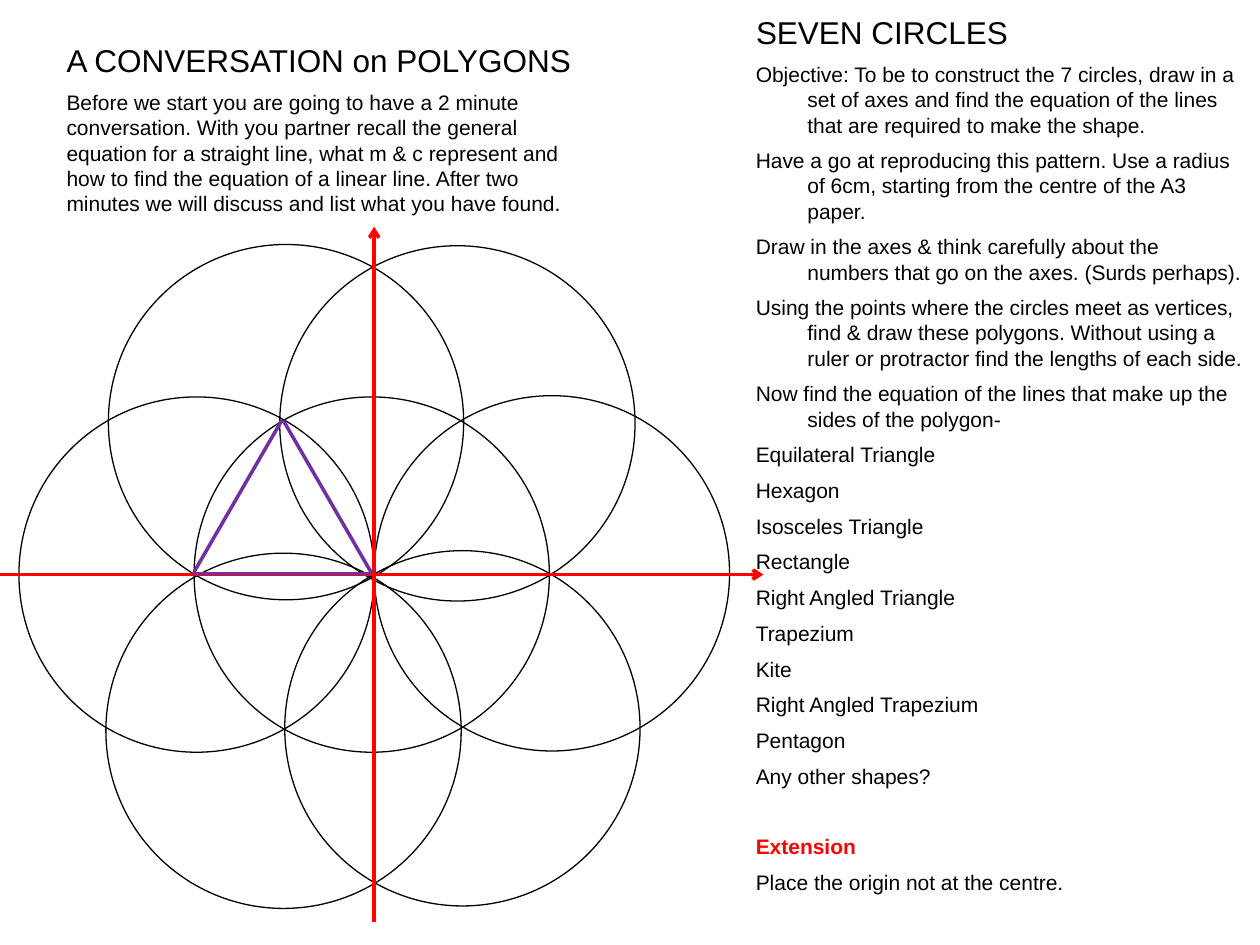
from lxml.etree import SubElement
from pptx import Presentation
from pptx.dml.color import RGBColor
from pptx.enum.shapes import MSO_CONNECTOR as CONN, MSO_SHAPE as SHAPE
from pptx.enum.text import MSO_ANCHOR, MSO_AUTO_SIZE, PP_ALIGN
from pptx.oxml.ns import qn
from pptx.util import Inches, Pt

BLACK = RGBColor(0x00, 0x00, 0x00)
RED = RGBColor(0xFF, 0x00, 0x00)
PURPLE = RGBColor(0x70, 0x30, 0xA0)
FONT = "Arial"
HEADING, BODY = 18, 12

# Content
TITLE = "SEVEN CIRCLES"
CONVERSATION = [
    "A CONVERSATION on POLYGONS",
    "Before we start you are going to have a 2 minute conversation. With you partner "
    "recall the general equation for a straight line, what m & c represent and how to "
    "find the equation of a linear line. After two minutes we will discuss and list "
    "what you have found.",
]
TASKS = [
    "Objective: To be to construct the 7 circles, draw in a set of axes and find the "
    "equation of the lines that are required to make the shape.",
    "Have a go at reproducing this pattern. Use a radius of 6cm, starting from the "
    "centre of the A3 paper.",
    "Draw in the axes & think carefully about the numbers that go on the axes. "
    "(Surds perhaps).",
    "Using the points where the circles meet as vertices, find & draw these polygons. "
    "Without using a ruler or protractor find the lengths of each side.",
    "Now find the equation of the lines that make up the sides of the polygon-",
    "Equilateral Triangle", "Hexagon", "Isosceles Triangle", "Rectangle",
    "Right Angled Triangle", "Trapezium", "Kite", "Right Angled Trapezium",
    "Pentagon", "Any other shapes?",
]
EXTENSION = ["Extension", "Place the origin not at the centre."]

# Geometry in inches: hand-placed circle centres, centre circle first
RADIUS = 1.41
CENTRES = [(2.95, 4.56), (4.38, 4.55), (3.63, 3.36), (2.27, 3.35),
           (1.56, 4.56), (2.25, 5.8), (3.67, 5.78)]
AXES = [((2.97, 7.32), (2.97, 1.8)), ((0, 4.56), (6.06, 4.56))]
TRIANGLE = [((1.54, 4.54), (2.24, 3.33)), ((1.54, 4.55), (2.93, 4.55)),
            ((2.95, 4.55), (2.25, 3.34))]


def place(sp, *box):
    sp.left, sp.top, sp.width, sp.height = map(Inches, box)


def style(p, size=BODY, color=BLACK, bold=False):
    p.alignment = PP_ALIGN.LEFT
    f = p.runs[0].font
    f.name, f.size, f.bold = FONT, Pt(size), bold
    f.color.rgb = color


def add_text(slide, box, lines, hanging=0):
    tf = slide.shapes.add_textbox(*map(Inches, box)).text_frame
    tf.word_wrap = True
    tf.text = "\n".join(lines)
    for i, p in enumerate(tf.paragraphs):
        style(p)
        p.space_before = Pt(6 if i else 0)
        if hanging:
            pPr = p._p.get_or_add_pPr()
            pPr.set("marL", str(Inches(hanging)))
            pPr.set("indent", str(-Inches(hanging)))
    return tf.paragraphs


def add_line(slide, start, end, color, arrow=False):
    c = slide.shapes.add_connector(CONN.STRAIGHT, *map(Inches, start + end))
    c.line.color.rgb, c.line.width = color, Pt(2)
    if arrow:
        SubElement(c.line._get_or_add_ln(), qn("a:tailEnd"), type="arrow")
    SubElement(c._element.spPr, qn("a:effectLst"))


prs = Presentation()
prs.slide_width, prs.slide_height = Inches(10), Inches(7.5)
slide = prs.slides.add_slide(prs.slide_layouts[5])

# Title
title = slide.shapes.title
place(title, 5.9, 0.05, 4.07, 0.39)
tf = title.text_frame
tf.text = TITLE
tf.vertical_anchor = MSO_ANCHOR.TOP
tf.auto_size = MSO_AUTO_SIZE.NONE
style(tf.paragraphs[0], HEADING)

# Task list, with a wider gap before the extension
tasks = add_text(slide, (5.9, 0.44, 4.07, 7.05), TASKS + EXTENSION, hanging=0.41)
extension = tasks[len(TASKS)]
style(extension, color=RED, bold=True)
extension.space_before = Pt(26)

# Conversation starter
heading = add_text(slide, (0.43, 0.28, 4.4, 1.51), CONVERSATION)[0]
style(heading, HEADING)

# Seven circles
circles = slide.shapes.add_group_shape()
for x, y in CENTRES:
    sp = circles.shapes.add_shape(SHAPE.OVAL, 0, 0, 0, 0)
    place(sp, x - RADIUS, y - RADIUS, 2 * RADIUS, 2 * RADIUS)
    sp.fill.background()
    sp.line.color.rgb, sp.line.width = BLACK, Pt(0.75)
    sp.shadow.inherit = False

# Axes and example triangle
for start, end in AXES:
    add_line(slide, start, end, RED, arrow=True)
for start, end in TRIANGLE:
    add_line(slide, start, end, PURPLE)

prs.save("out.pptx")
